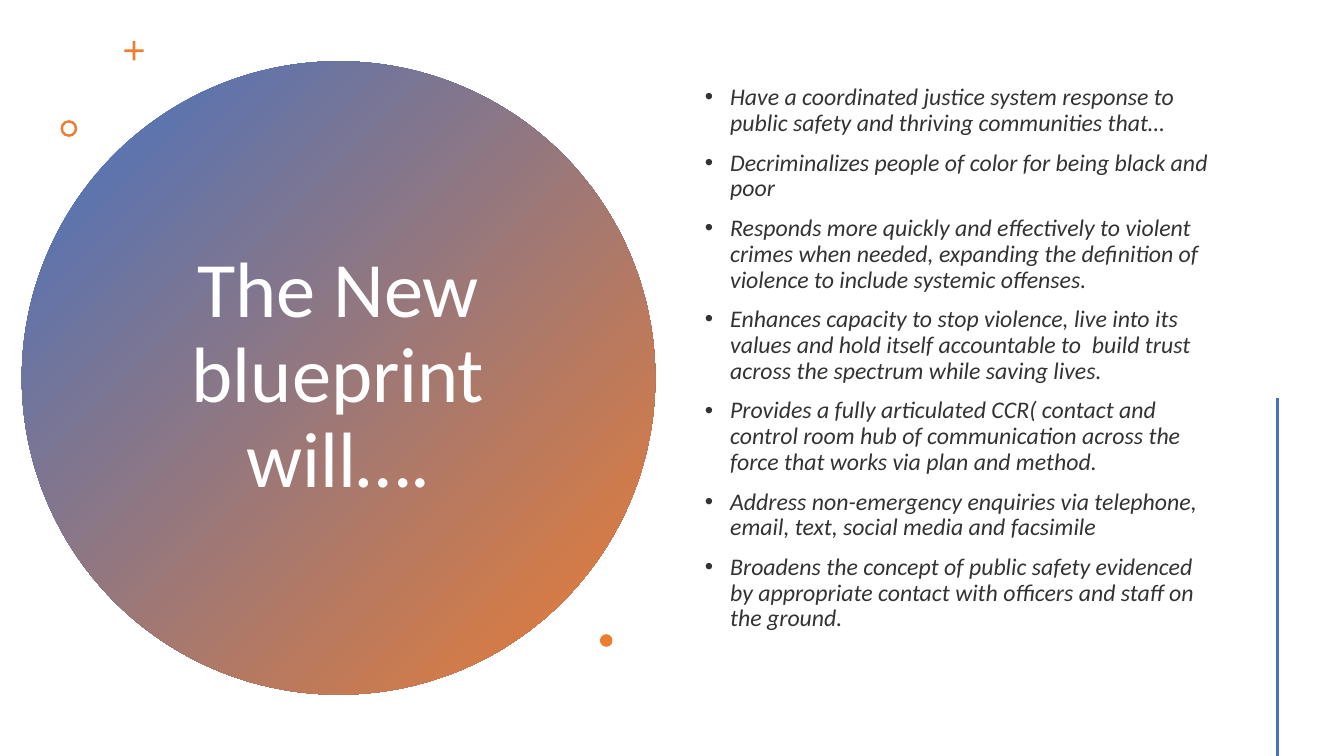
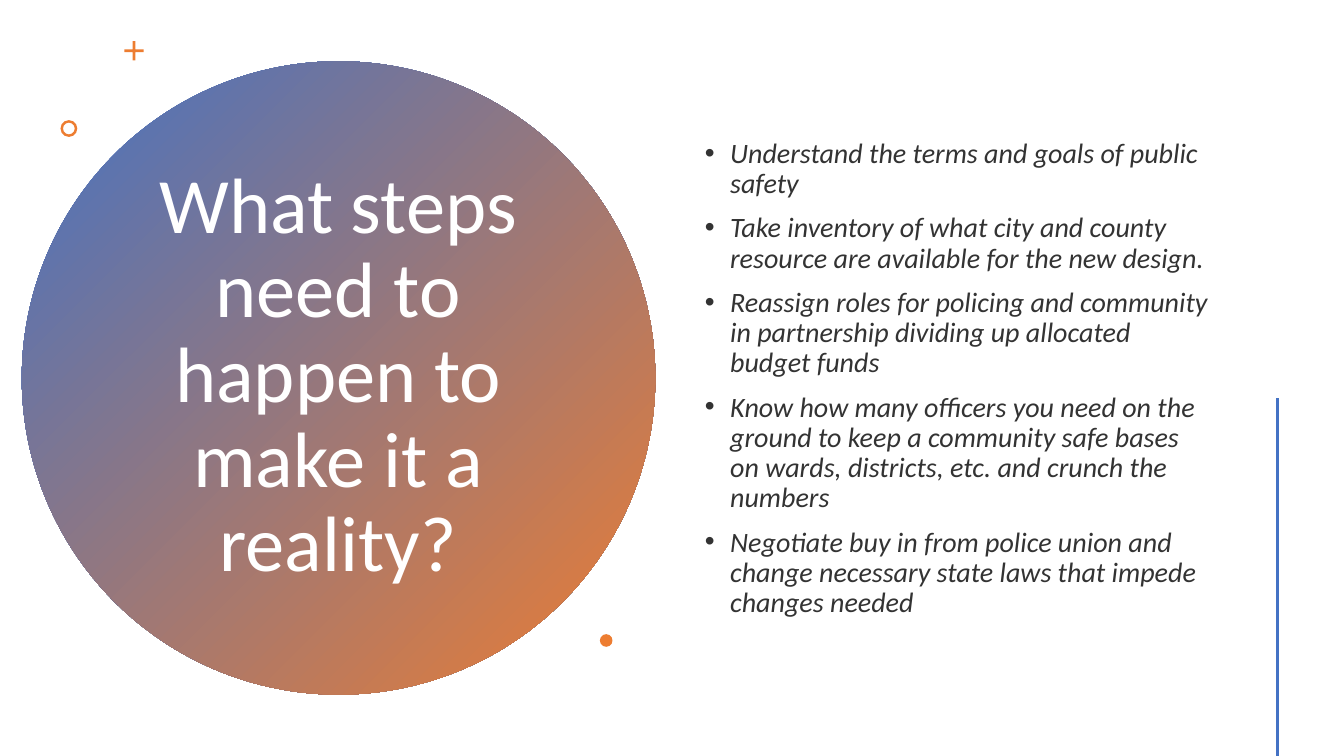
import pptx
import pptx.dml.color
import pptx.enum.shapes
import pptx.enum.text
import pptx.util
from lxml import etree

SLIDE_WIDTH = pptx.util.Inches(13.33)
SLIDE_HEIGHT = pptx.util.Inches(7.5)
ROWS = 90
CELL = SLIDE_HEIGHT / ROWS

BLUE, ORANGE, WHITE, CHARCOAL = "4472C4", "ED7D31", "FFFFFF", "333333"
FONT = "Calibri"
LINE_SPACING = 0.9
OVAL = pptx.enum.shapes.MSO_SHAPE.OVAL
DONUT = pptx.enum.shapes.MSO_SHAPE.DONUT
CROSS = pptx.enum.shapes.MSO_SHAPE.CROSS

BLUEPRINT_GOALS = [
    "Have a coordinated justice system response to public safety and thriving communities that…",
    "Decriminalizes people of color for being black and poor",
    "Responds more quickly and effectively to violent crimes when needed, expanding the "
    "definition of violence to include systemic offenses.",
    "Enhances capacity to stop violence, live into its values and hold itself accountable to  "
    "build trust across the spectrum while saving lives.",
    "Provides a fully articulated CCR( contact and control room hub of communication across "
    "the force that works via plan and method.",
    "Address non-emergency enquiries via telephone, email, text, social media and facsimile",
    "Broadens the concept of public safety evidenced by appropriate contact with officers "
    "and staff on the ground.",
]
NEXT_STEPS = [
    "Understand the terms and goals of public safety",
    "Take inventory of what city and county resource are available for the new design.",
    "Reassign roles for policing and community in partnership dividing up allocated budget funds",
    "Know how many officers you need on the ground to keep a community safe bases on wards, "
    "districts, etc. and crunch the numbers",
    "Negotiate buy in from police union and change necessary state laws that impede "
    "changes needed",
]


def color(hex_code):
    """Turn a hex string into a colour."""
    return pptx.dml.color.RGBColor.from_string(hex_code)


def cells(count):
    """Turn a number of square grid cells into a length."""
    return pptx.util.Emu(round(count * CELL))


def place(shape, column, row, columns, rows):
    """Move and size a placeholder on the grid."""
    shape.left, shape.top = cells(column), cells(row)
    shape.width, shape.height = cells(columns), cells(rows)


def style_paragraph(paragraph, size, hex_code, italic=False):
    """Give a paragraph its font and line spacing."""
    paragraph.line_spacing = LINE_SPACING
    paragraph.font.name = FONT
    paragraph.font.size = pptx.util.Pt(size)
    paragraph.font.color.rgb = color(hex_code)
    paragraph.font.italic = italic


def fill_frame(shape, texts):
    """Write vertically centred paragraphs and return them."""
    frame = shape.text_frame
    frame.text = "\n".join(texts)
    frame.word_wrap = True
    frame.auto_size = pptx.enum.text.MSO_AUTO_SIZE.NONE
    frame.vertical_anchor = pptx.enum.text.MSO_ANCHOR.MIDDLE
    return frame.paragraphs


def set_bullet(paragraph):
    """Give a paragraph a hanging round bullet."""
    properties = paragraph._p.get_or_add_pPr()
    indent = pptx.util.Inches(0.25)
    properties.set("marL", str(indent))
    properties.set("indent", str(-indent))
    for tag, name, value in (("a:buFont", "typeface", "Arial"), ("a:buChar", "char", "•")):
        etree.SubElement(properties, pptx.oxml.ns.qn(tag)).set(name, value)


def add_title(slide, text):
    """Set the white title inside the disc."""
    title = slide.shapes.title
    place(title, 16.3, 16.9, 47.9, 56)
    for paragraph in fill_frame(title, [text]):
        style_paragraph(paragraph, 56, WHITE)
        paragraph.alignment = pptx.enum.text.PP_ALIGN.CENTER


def add_list(slide, items, size, bottom_inset):
    """Set the italic bullet list in the body placeholder."""
    body = slide.placeholders[1]
    place(body, 82.7, 6.8, 62.6, 76.6)
    body.text_frame.margin_bottom = cells(bottom_inset)
    for paragraph in fill_frame(body, items):
        style_paragraph(paragraph, size, CHARCOAL, italic=True)
        paragraph.space_before = pptx.util.Pt(10)
        set_bullet(paragraph)


def add_ornament(slide, kind, column, row, size, adjustment=None):
    """Add a square orange shape without outline."""
    shape = slide.shapes.add_shape(kind, cells(column), cells(row), cells(size), cells(size))
    shape.shadow.inherit = False
    shape.line.fill.background()
    shape.fill.solid()
    shape.fill.fore_color.rgb = color(ORANGE)
    if adjustment is not None:
        shape.adjustments[0] = adjustment
    return shape


def add_disc(slide):
    """Add the large gradient disc behind the title."""
    disc = add_ornament(slide, OVAL, 2.6, 7.3, 75.4)
    disc.fill.gradient()
    disc.fill.gradient_angle = 315
    for stop, hex_code in zip(disc.fill.gradient_stops, (BLUE, ORANGE)):
        stop.color.rgb = color(hex_code)
    slide.shapes.title.element.addprevious(disc.element)


def add_side_line(slide):
    """Add the vertical line that runs off the lower edge."""
    column = cells(152)
    line = slide.shapes.add_connector(
        pptx.enum.shapes.MSO_CONNECTOR.STRAIGHT, column, cells(47.4), column, cells(ROWS))
    line.line.color.rgb = color(BLUE)
    line.line.width = pptx.util.Pt(2)
    etree.SubElement(line.element.spPr, pptx.oxml.ns.qn("a:effectLst"))


def add_list_slide(presentation, title, items, size, bottom_inset=0.6):
    """Add a slide with a title disc, ornaments and a list."""
    slide = presentation.slides.add_slide(presentation.slide_layouts[1])
    add_title(slide, title)
    add_list(slide, items, size, bottom_inset)
    add_disc(slide)
    add_ornament(slide, CROSS, 14.8, 4.9, 2.3, 0.43)
    add_ornament(slide, DONUT, 7.2, 14.3, 2, 0.15)
    add_ornament(slide, OVAL, 71.4, 75.5, 1.5)
    add_side_line(slide)


def main():
    """Build and save the presentation."""
    presentation = pptx.Presentation()
    presentation.slide_width, presentation.slide_height = SLIDE_WIDTH, SLIDE_HEIGHT
    add_list_slide(presentation, "The New blueprint will….", BLUEPRINT_GOALS, 17, 5.4)
    add_list_slide(presentation, "What steps need to happen to make it a reality?", NEXT_STEPS, 20)
    presentation.save("out.pptx")


if __name__ == "__main__":
    main()
